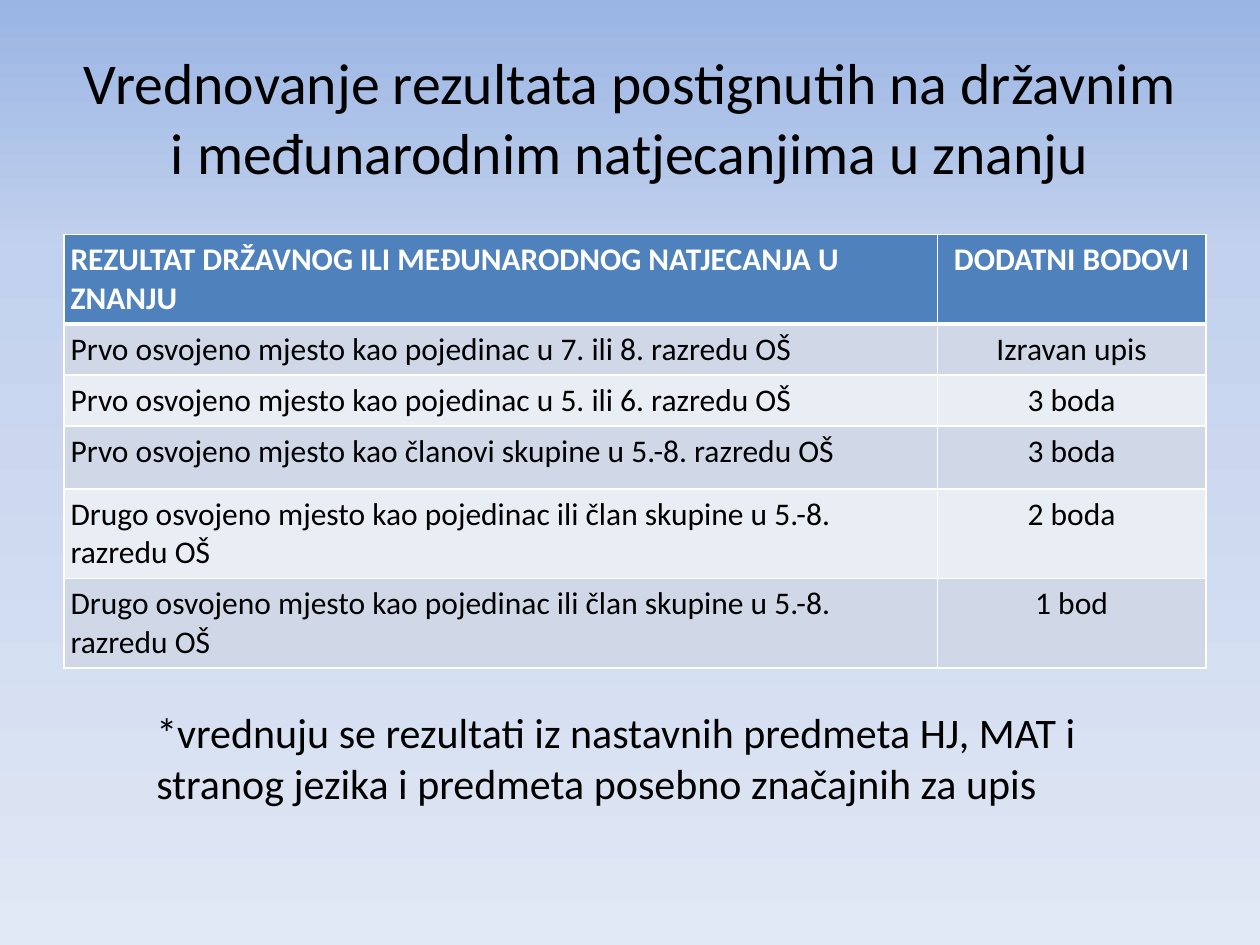
import copy
from dataclasses import dataclass

import pptx
import pptx.dml.color
import pptx.enum.text
import pptx.oxml
import pptx.oxml.ns
import pptx.util
from pptx.util import Inches

HUES = {
    "top": "9AB5E4", "mid": "C2D1ED", "low": "E1E8F5",
    "head": "4F81BD", "odd": "D0D8E8", "even": "E9EDF4",
    "white": "FFFFFF", "black": "000000",
}
ALIGN = pptx.enum.text.PP_ALIGN
ANCHOR = pptx.enum.text.MSO_ANCHOR


@dataclass
class Row:
    result: str
    points: str
    height: float


ROWS = [
    Row("REZULTAT DRŽAVNOG ILI MEĐUNARODNOG NATJECANJA U ZNANJU", "DODATNI BODOVI", 0.7),
    Row("Prvo osvojeno mjesto kao pojedinac u 7. ili 8. razredu OŠ", "Izravan upis", 0.4),
    Row("Prvo osvojeno mjesto kao pojedinac u 5. ili 6. razredu OŠ", "3 boda", 0.4),
    Row("Prvo osvojeno mjesto kao članovi skupine u 5.-8. razredu OŠ", "3 boda", 0.5),
    Row("Drugo osvojeno mjesto kao pojedinac ili član skupine u 5.-8. razredu OŠ", "2 boda", 0.7),
    Row("Drugo osvojeno mjesto kao pojedinac ili član skupine u 5.-8. razredu OŠ", "1 bod", 0.7),
]
WIDTHS = [6.93, 2.13]


def color(name: str) -> pptx.dml.color.RGBColor:
    return pptx.dml.color.RGBColor.from_string(HUES[name])


def write(frame, text: str, size: float = 18, hue: str = "black",
          bold: bool = False, align=ALIGN.LEFT, before: float = 0):
    """Put one formatted paragraph in a text frame and return it."""
    frame.word_wrap = True
    para = frame.paragraphs[0]
    para.alignment = align
    para.space_before = pptx.util.Pt(before)
    run = para.add_run()
    run.text = text
    run.font.name = "Calibri"
    run.font.size = pptx.util.Pt(size)
    run.font.bold = bold
    run.font.color.rgb = color(hue)
    return para


def place(shape, left: float, top: float, width: float, height: float) -> None:
    shape.left, shape.top = Inches(left), Inches(top)
    shape.width, shape.height = Inches(width), Inches(height)
    shape.text_frame.auto_size = pptx.enum.text.MSO_AUTO_SIZE.NONE


def paint(slide) -> None:
    """Fill the background with a three-stop gradient, top to bottom."""
    fill = slide.background.fill
    fill.gradient()
    fill.gradient_angle = 270
    last = fill.gradient_stops[1]._gs
    last.addprevious(copy.deepcopy(last))
    for stop, (spot, hue) in zip(fill.gradient_stops,
                                 [(0, "top"), (0.27, "mid"), (1, "low")]):
        stop.position = spot
        stop.color.rgb = color(hue)


def edge(cell, sides: dict[str, float]) -> None:
    """Draw white borders, with a width in points for each side."""
    props = cell._tc.get_or_add_tcPr()
    for side, width in sides.items():
        props.append(pptx.oxml.parse_xml(
            f'<a:ln{side} {pptx.oxml.ns.nsdecls("a")} w="{pptx.util.Pt(width)}">'
            f'<a:solidFill><a:srgbClr val="{HUES["white"]}"/></a:solidFill>'
            f'</a:ln{side}>'))


def grid(slide) -> None:
    high = sum(row.height for row in ROWS)
    table = slide.shapes.add_table(
        len(ROWS), len(WIDTHS), Inches(0.51), Inches(1.86),
        Inches(sum(WIDTHS)), Inches(high)).table
    for col, width in zip(table.columns, WIDTHS):
        col.width = Inches(width)
    for i, row in enumerate(ROWS):
        table.rows[i].height = Inches(row.height)
        head = i == 0
        band = "head" if head else "odd" if i % 2 else "even"
        for j, text in enumerate((row.result, row.points)):
            cell = table.cell(i, j)
            cell.margin_left = cell.margin_right = Inches(0.05)
            cell.margin_top = cell.margin_bottom = Inches(0.05)
            edge(cell, {"L": 1, "R": 1, "T": 3 if i == 1 else 1, "B": 3 if head else 1})
            cell.fill.solid()
            cell.fill.fore_color.rgb = color(band)
            write(cell.text_frame, text, hue="white" if head else "black",
                  bold=head, align=ALIGN.CENTER if j else ALIGN.LEFT)


def main() -> None:
    deck = pptx.Presentation()
    deck.slide_width, deck.slide_height = Inches(10), Inches(7.5)
    slide = deck.slides.add_slide(deck.slide_layouts[1])
    paint(slide)

    # Title
    title = slide.shapes.title
    place(title, 0.5, 0.3, 9, 1.25)
    title.text_frame.vertical_anchor = ANCHOR.MIDDLE
    write(title.text_frame,
          "Vrednovanje rezultata postignutih na državnim i međunarodnim natjecanjima u znanju",
          size=33, align=ALIGN.CENTER)

    # Table of results and points
    grid(slide)

    # Note without a bullet
    note = slide.placeholders[1]
    place(note, 1.14, 5.56, 8.19, 1.14)
    para = write(note.text_frame,
                 "*vrednuju se rezultati iz nastavnih predmeta HJ, MAT i "
                 "stranog jezika i predmeta posebno značajnih za upis",
                 size=24, before=4.8)
    props = para._p.get_or_add_pPr()
    props.set("marL", "0")
    props.set("indent", "0")
    props.append(pptx.oxml.parse_xml(f'<a:buNone {pptx.oxml.ns.nsdecls("a")}/>'))

    deck.save("out.pptx")


if __name__ == "__main__":
    main()
